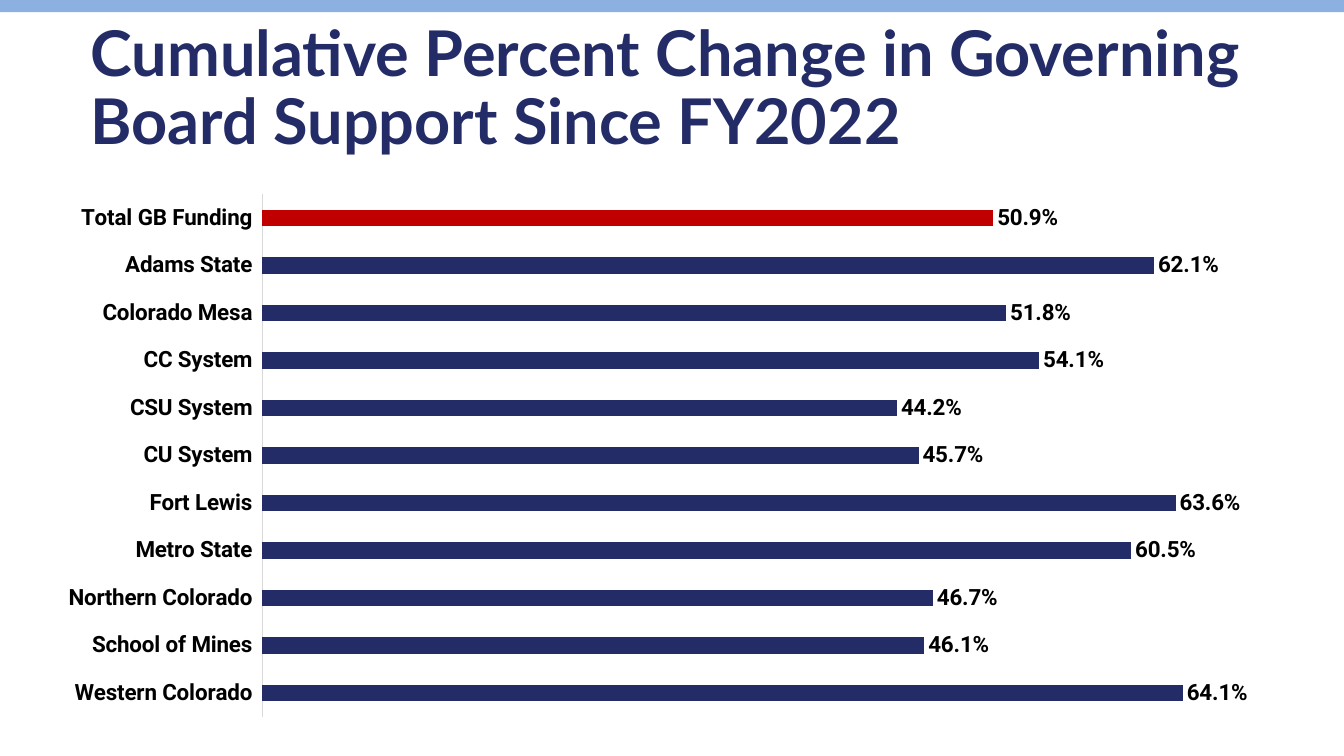
from dataclasses import dataclass

from lxml import etree
from pptx import Presentation
from pptx.chart.data import CategoryChartData
from pptx.dml.color import RGBColor
from pptx.enum.chart import XL_CHART_TYPE as ChartType
from pptx.enum.chart import XL_LABEL_POSITION as LabelPosition
from pptx.enum.chart import XL_TICK_LABEL_POSITION as TickLabels
from pptx.enum.chart import XL_TICK_MARK as TickMark
from pptx.enum.shapes import MSO_SHAPE as ShapeType
from pptx.enum.text import MSO_ANCHOR as Anchor
from pptx.oxml.ns import qn
from pptx.util import Emu, Pt

EMU_PER_PX = 9144  # 100 px to the inch
COLORS = {
    "navy": "232C67",
    "red": "C00000",
    "sky": "8CB0DF",
    "black": "000000",
    "axis": "D9D9D9",
}
PERCENT = "0.0%"


@dataclass(frozen=True)
class Box:
    left: int
    top: int
    width: int
    height: int

    def emu(self) -> tuple[Emu, Emu, Emu, Emu]:
        return px(self.left), px(self.top), px(self.width), px(self.height)


@dataclass(frozen=True)
class Bar:
    board: str
    change: float
    color: str = "navy"


# Listed from bottom to top, as a bar chart stacks its categories
BARS = [
    Bar("Western Colorado", 0.641),
    Bar("School of Mines", 0.461),
    Bar("Northern Colorado", 0.467),
    Bar("Metro State", 0.605),
    Bar("Fort Lewis", 0.636),
    Bar("CU System", 0.457),
    Bar("CSU System", 0.442),
    Bar("CC System", 0.541),
    Bar("Colorado Mesa", 0.518),
    Bar("Adams State", 0.621),
    Bar("Total GB Funding", 0.509, "red"),
]


def px(length: int) -> Emu:
    return Emu(length * EMU_PER_PX)


def rgb(name: str) -> RGBColor:
    return RGBColor.from_string(COLORS[name])


def style_font(font, name: str, size: int, color: str) -> None:
    font.name = name
    font.size = Pt(size)
    font.bold = True
    font.color.rgb = rgb(color)


def paint(fill, color: str) -> None:
    fill.solid()
    fill.fore_color.rgb = rgb(color)


def add_banner(slide, box: Box) -> None:
    shape = slide.shapes.add_shape(ShapeType.RECTANGLE, *box.emu())
    shape.shadow.inherit = False
    paint(shape.fill, "sky")
    shape.line.fill.background()


def add_title(slide, box: Box, text: str) -> None:
    frame = slide.shapes.add_textbox(*box.emu()).text_frame
    frame.word_wrap = True
    frame.vertical_anchor = Anchor.MIDDLE
    paragraph = frame.paragraphs[0]
    paragraph.line_spacing = 0.9
    run = paragraph.add_run()
    run.text = text
    style_font(run.font, "Lato", 45, "navy")


def place_plot(chart, **fractions: float) -> None:
    """Fix the inner plot area as fractions of the chart frame."""
    plot_area = chart._chartSpace.find(".//" + qn("c:plotArea"))
    for old_layout in plot_area.findall(qn("c:layout")):
        plot_area.remove(old_layout)
    layout = etree.Element(qn("c:layout"))
    manual = etree.SubElement(layout, qn("c:manualLayout"))
    settings = {"layoutTarget": "inner", "xMode": "edge", "yMode": "edge", **fractions}
    for tag, value in settings.items():
        etree.SubElement(manual, qn(f"c:{tag}")).set("val", str(value))
    plot_area.insert(0, layout)


def add_bar_chart(slide, box: Box, bars: list[Bar]) -> None:
    data = CategoryChartData(number_format=PERCENT)
    data.categories = [bar.board for bar in bars]
    data.add_series("Series 1", [bar.change for bar in bars])
    chart = slide.shapes.add_chart(ChartType.BAR_CLUSTERED, *box.emu(), data).chart
    chart.has_legend = False
    chart.has_title = False
    chart.font.name = "Calibri"
    chart.font.size = Pt(10)
    chart.font.color.rgb = rgb("black")
    place_plot(chart, x=0.17, y=0.02, w=0.81, h=0.96)

    # Axes
    board_axis = chart.category_axis
    board_axis.major_tick_mark = TickMark.NONE
    board_axis.tick_label_position = TickLabels.LOW
    board_axis.format.line.color.rgb = rgb("axis")
    board_axis.format.line.width = Pt(0.75)
    style_font(board_axis.tick_labels.font, "Roboto", 16, "black")
    change_axis = chart.value_axis
    change_axis.minimum_scale = 0
    change_axis.maximum_scale = 0.7
    change_axis.has_major_gridlines = False
    change_axis.visible = False

    # Bars
    plot = chart.plots[0]
    plot.gap_width = 182
    plot.vary_by_categories = False
    series = plot.series[0]
    paint(series.format.fill, "navy")
    for index, bar in enumerate(bars):
        if bar.color != "navy":
            paint(series.points[index].format.fill, bar.color)

    # Value labels
    labels = series.data_labels
    labels.show_value = True
    labels.number_format = PERCENT
    labels.number_format_is_linked = False
    labels.position = LabelPosition.OUTSIDE_END
    style_font(labels.font, "Roboto", 16, "black")


def main() -> None:
    presentation = Presentation()
    presentation.slide_width = px(1333)
    presentation.slide_height = px(750)
    slide = presentation.slides.add_slide(presentation.slide_layouts[6])
    add_title(
        slide,
        Box(80, 18, 1174, 143),
        "Cumulative Percent Change in Governing Board Support Since FY2022",
    )
    add_banner(slide, Box(0, 0, 1333, 12))
    add_bar_chart(slide, Box(51, 182, 1231, 540), BARS)
    presentation.save("out.pptx")


if __name__ == "__main__":
    main()
